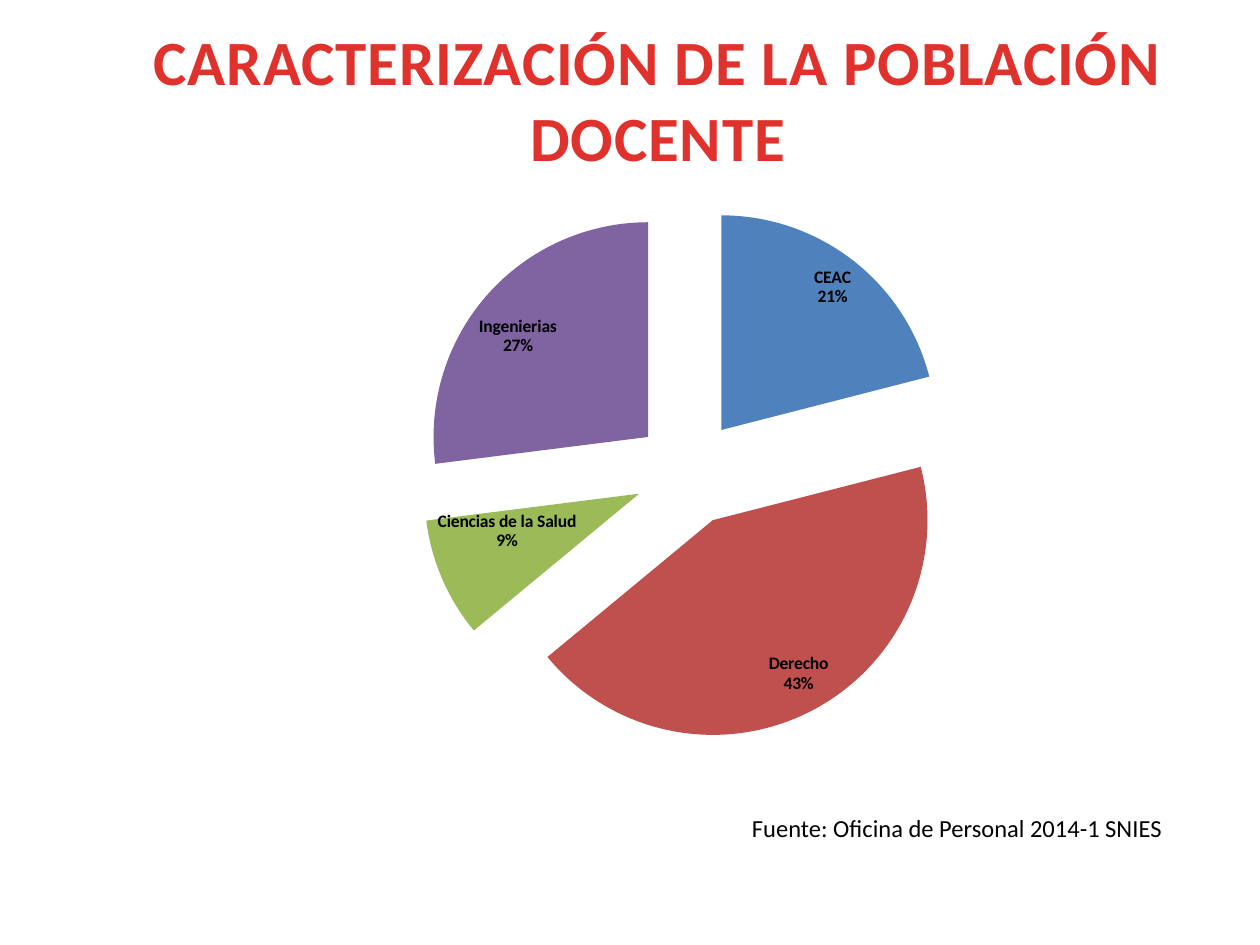
from lxml import etree
from pptx import Presentation
from pptx.chart.data import CategoryChartData
from pptx.dml.color import RGBColor
from pptx.enum.chart import XL_CHART_TYPE, XL_LABEL_POSITION
from pptx.enum.shapes import MSO_SHAPE
from pptx.enum.text import MSO_ANCHOR, PP_ALIGN
from pptx.oxml import parse_xml
from pptx.oxml.ns import nsdecls, qn
from pptx.util import Inches, Pt

RED = RGBColor(0xE0, 0x32, 0x2D)
DARK_RED = RGBColor(0xA2, 0x20, 0x1C)
BLACK = RGBColor(0x00, 0x00, 0x00)
WHITE = RGBColor(0xFF, 0xFF, 0xFF)

# Faculty: share of teachers, slice colour, label shift in inches
FACULTIES = {
    "CEAC": (21, RGBColor(0x4F, 0x81, 0xBD), (0.02, 0.01)),
    "Derecho": (43, RGBColor(0xC0, 0x50, 0x4D), (0.17, -0.09)),
    "Ciencias de la Salud": (9, RGBColor(0x9B, 0xBB, 0x59), (-0.09, -0.2)),
    "Ingenierias": (27, RGBColor(0x80, 0x64, 0xA2), (-0.11, 0.13)),
}


class SlideBuilder:
    title_format = {"name": "Calibri", "size": Pt(36), "bold": True}
    label_format = {"name": "Calibri", "size": Pt(10), "bold": True}
    source_format = {"name": "Calibri", "size": Pt(14), "bold": False}
    label_settings = {
        "show_category_name": True, "show_percentage": True,
        "show_value": False, "position": XL_LABEL_POSITION.INSIDE_END}

    def __init__(self, slide):
        self.slide = slide

    def apply_format(self, target, values):
        for name, value in values.items():
            setattr(target, name, value)

    def add_title(self, lines, left, top, width, height):
        shape = self.slide.shapes.add_textbox(
            Inches(left), Inches(top), Inches(width), Inches(height))
        frame = shape.text_frame
        frame.word_wrap = True
        frame.text = "\n".join(lines)
        for paragraph in frame.paragraphs:
            paragraph.alignment = PP_ALIGN.CENTER
            font = paragraph.runs[0].font
            self.apply_format(font, self.title_format)
            font.fill.gradient()
            font.fill.gradient_angle = 270
            stops = zip(font.fill.gradient_stops, (0.25, 1), (RED, DARK_RED))
            for stop, position, color in stops:
                stop.position = position
                stop.color.rgb = color
            # Letter spacing of half a point
            font._element.set("spc", "50")

    def add_pie(self, faculties, left, top, width, height):
        data = CategoryChartData()
        data.categories = list(faculties)
        data.add_series("Series 1", [row[0] for row in faculties.values()])
        chart = self.slide.shapes.add_chart(
            XL_CHART_TYPE.PIE, Inches(left), Inches(top),
            Inches(width), Inches(height), data).chart
        chart.has_title = False
        chart.has_legend = False
        self.apply_format(chart.font, self.label_format)
        chart.font.color.rgb = BLACK

        plot = chart.plots[0]
        plot.vary_by_categories = True
        series = plot.series[0]
        labels = series.data_labels
        self.apply_format(labels, self.label_settings)
        self.apply_format(labels.font, self.label_format)
        labels.font.color.rgb = BLACK

        for index, (_, color, (right, down)) in enumerate(faculties.values()):
            point = series.points[index]
            point.format.fill.solid()
            point.format.fill.fore_color.rgb = color
            self.place_label(series, index, x=right / width, y=down / height)

        # Slices pulled apart
        explosion = f'<c:explosion {nsdecls("c")} val="25"/>'
        slices = series._element.findall(qn("c:dPt"))
        slices[0].addprevious(parse_xml(explosion))
        for slice_element in slices:
            slice_element.find(qn("c:spPr")).addprevious(parse_xml(explosion))

        plot_area = chart._chartSpace.chart.plotArea
        for old_layout in plot_area.findall(qn("c:layout")):
            plot_area.remove(old_layout)
        plot_area.insert(0, self.make_layout(
            layoutTarget="inner", xMode="edge", yMode="edge",
            x=2.77 / width, y=0.14 / height, w=4.29 / width, h=4.26 / height))

    def place_label(self, series, index, **shift):
        label = series.points[index].data_label
        label.position = XL_LABEL_POSITION.INSIDE_END
        self.apply_format(label.font, self.label_format)
        label.font.color.rgb = BLACK
        element = series._element.findall(f".//{qn('c:dLbl')}")[index]
        element.find(qn("c:idx")).addnext(self.make_layout(**shift))
        shown = {"showVal": "0", "showCatName": "1", "showPercent": "1"}
        for name, value in shown.items():
            element.find(qn(f"c:{name}")).set("val", value)

    def make_layout(self, **settings):
        layout = parse_xml(f'<c:layout {nsdecls("c")}><c:manualLayout/></c:layout>')
        for name, value in settings.items():
            etree.SubElement(layout[0], qn(f"c:{name}")).set("val", str(value))
        return layout

    def add_source(self, text, left, top, width, height):
        shape = self.slide.shapes.add_shape(
            MSO_SHAPE.RECTANGLE, Inches(left), Inches(top),
            Inches(width), Inches(height))
        shape.shadow.inherit = False
        shape.fill.solid()
        shape.fill.fore_color.rgb = WHITE
        shape.line.fill.background()
        frame = shape.text_frame
        frame.word_wrap = True
        frame.vertical_anchor = MSO_ANCHOR.TOP
        frame.text = text
        paragraph = frame.paragraphs[0]
        paragraph.alignment = PP_ALIGN.LEFT
        self.apply_format(paragraph.runs[0].font, self.source_format)
        paragraph.runs[0].font.color.rgb = BLACK


def main():
    presentation = Presentation()
    presentation.slide_width = Inches(10)
    presentation.slide_height = Inches(7.5)
    builder = SlideBuilder(
        presentation.slides.add_slide(presentation.slide_layouts[6]))

    # Heading
    builder.add_title(["CARACTERIZACIÓN DE LA POBLACIÓN", "DOCENTE"],
                      0.75, 0.13, 8.94, 1.31)
    # Teachers by faculty
    builder.add_pie(FACULTIES, 0.55, 1.48, 8.75, 4.53)
    # Data source
    builder.add_source("Fuente: Oficina de Personal 2014-1 SNIES",
                       5.87, 6.4, 4.1, 0.34)

    presentation.save("out.pptx")


if __name__ == "__main__":
    main()
